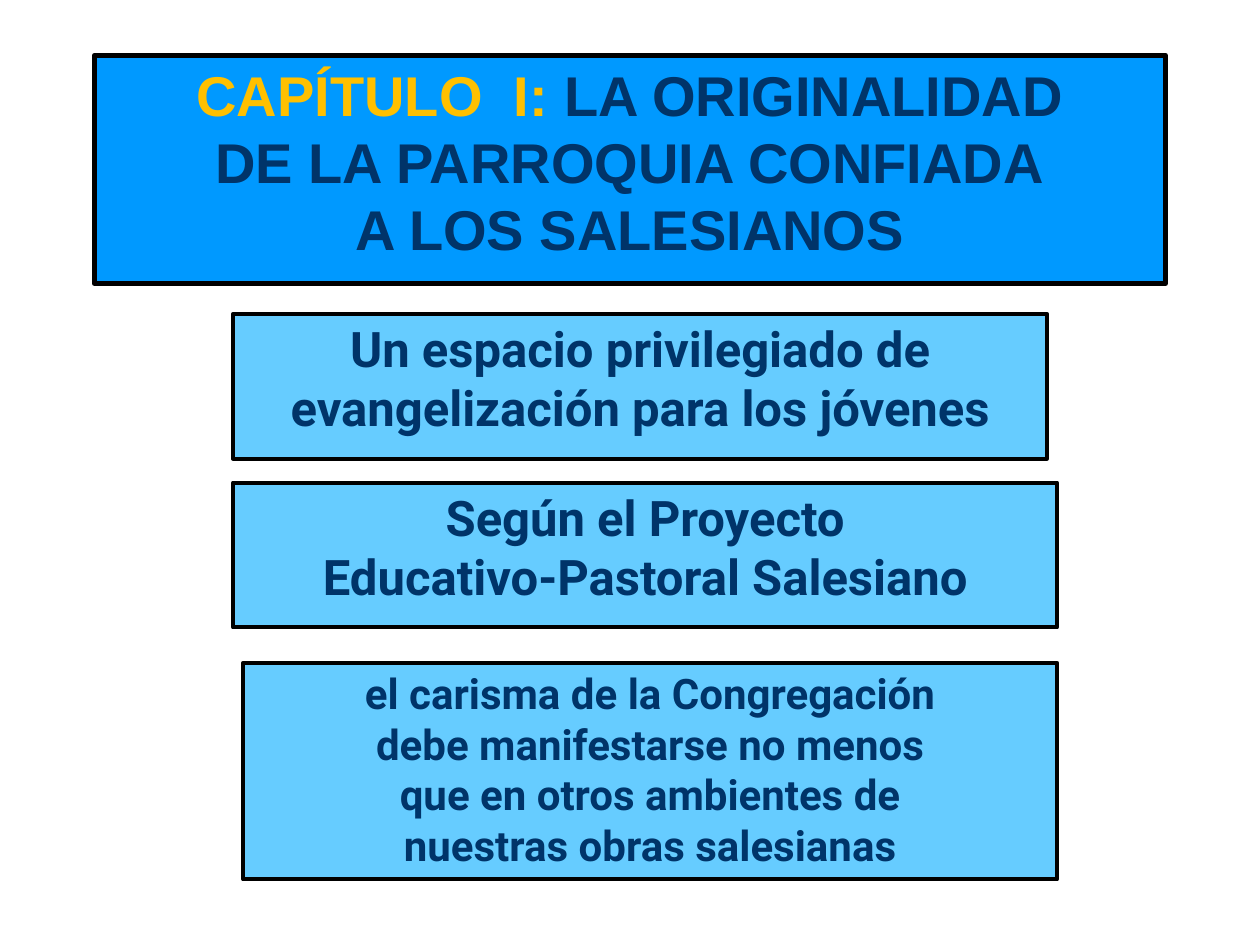
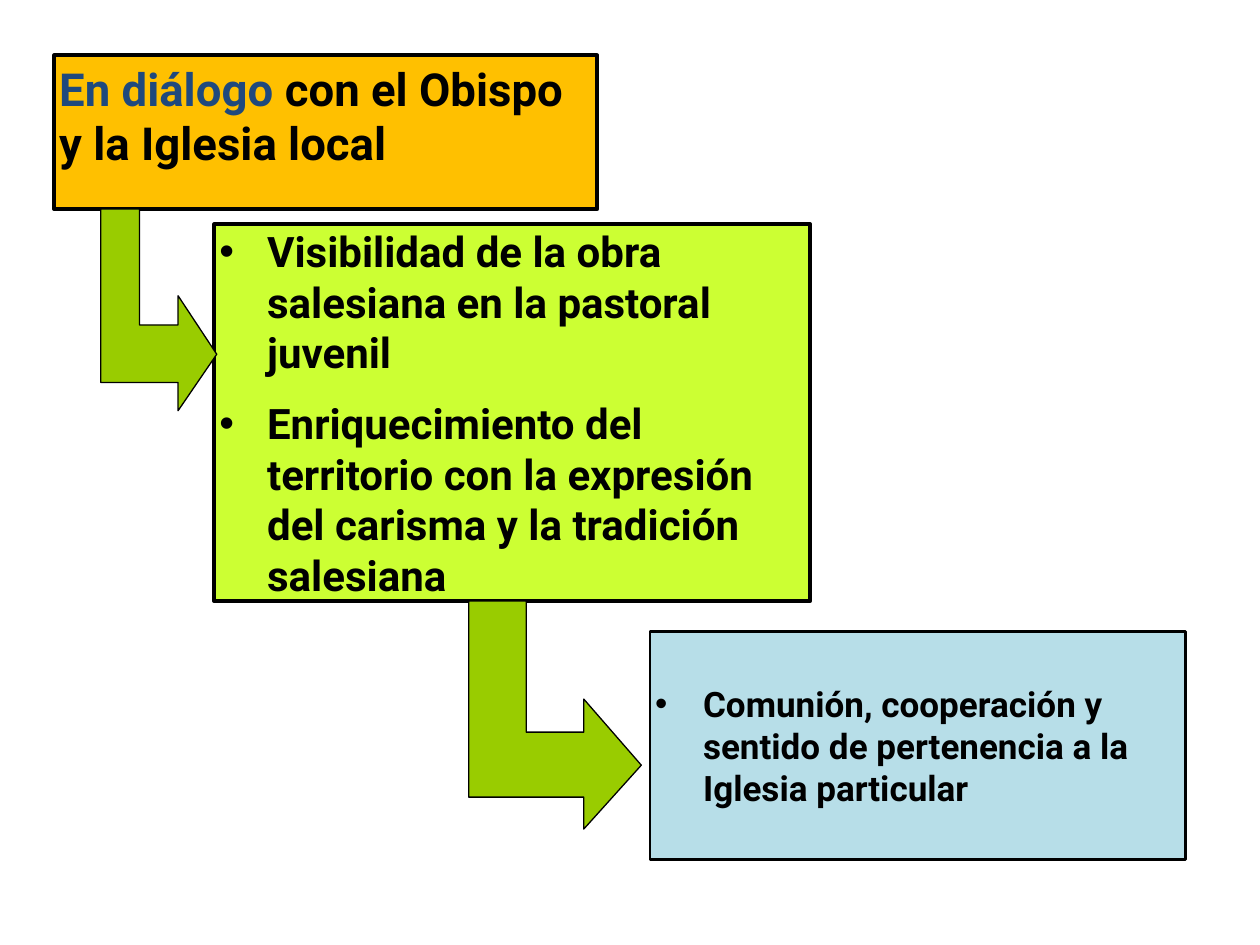
from lxml.etree import SubElement as Sub
from pptx import Presentation as Deck
from pptx.dml.color import RGBColor as Rgb
from pptx.enum.shapes import MSO_SHAPE as Kind
from pptx.enum.text import MSO_ANCHOR as Anchor, MSO_AUTO_SIZE as Fit, PP_ALIGN as Align
from pptx.oxml.ns import qn
from pptx.util import Inches, Pt

COLS = 100
NAVY, BLACK, GOLD, LIME = "003469", "000000", "FFC000", "99CC00"
BEND = [(0, 0), (1 / 3, 0), (1 / 3, 0.575), (2 / 3, 0.575), (2 / 3, 0.43),
        (1, 0.72), (2 / 3, 1), (2 / 3, 0.86), (0, 0.86)]


def hue(code):
    return Rgb.from_string(code)


class Board:
    """Draws framed panels and bent arrows on a grid over the current slide."""

    def __init__(self):
        self.deck = Deck()
        self.deck.slide_width, self.deck.slide_height = Inches(10), Inches(7.5)
        self.unit = self.deck.slide_width / COLS
        self.font = "Roboto"
        self.slide = None

    def page(self, layout):
        self.slide = self.deck.slides.add_slide(self.deck.slide_layouts[layout])

    def grid(self, *cells):
        return [round(cell * self.unit) for cell in cells]

    def paint(self, shape, fill, width):
        shape.fill.solid()
        shape.fill.fore_color.rgb = hue(fill)
        shape.line.color.rgb = hue(BLACK)
        shape.line.width = Pt(width)

    def frame(self, shape, area, fill, width=2.25, anchor=Anchor.TOP):
        shape.left, shape.top, shape.width, shape.height = self.grid(*area)
        self.paint(shape, fill, width)
        text = shape.text_frame
        text.word_wrap, text.auto_size = True, Fit.NONE
        text.vertical_anchor = anchor
        text.margin_left = text.margin_right = Inches(0.04)
        text.margin_top = text.margin_bottom = Inches(0.04)
        return text

    def label(self, text, lines, size, color, font=None, align=Align.LEFT, after=0):
        text.text = "\n".join(lines)
        for par in text.paragraphs:
            par.alignment = align
            par.space_before, par.space_after = Pt(0), Pt(after)
            for run in par.runs:
                self.style(run, size, color, font)

    def style(self, run, size, color, font=None):
        run.font.name = font or self.font
        run.font.size, run.font.bold = Pt(size), True
        run.font.color.rgb = hue(color)

    def title(self, area, fill, lead, tint, lines, size, color, width, font=None,
              align=Align.LEFT):
        text = self.frame(self.slide.shapes.title, area, fill, width)
        self.label(text, [lead, *lines[1:]], size, color, font, align)
        first = text.paragraphs[0]
        first.runs[0].font.color.rgb = hue(tint)
        rest = first.add_run()
        rest.text = lines[0]
        self.style(rest, size, color, font)

    def box(self):
        shape = self.slide.shapes.add_shape(Kind.RECTANGLE, 0, 0, 0, 0)
        shape.shadow.inherit = False
        return shape

    def panel(self, area, lines, size):
        text = self.frame(self.box(), area, "66CCFF")
        self.label(text, lines, size, NAVY, align=Align.CENTER)

    def items(self, shape, area, fill, lines, size, width=2.25, after=0):
        text = self.frame(shape, area, fill, width, Anchor.MIDDLE)
        self.label(text, lines, size, BLACK, after=after)
        for par in text.paragraphs:
            props = par._p.get_or_add_pPr()
            props.set("marL", str(Inches(0.38)))
            props.set("indent", str(-Inches(0.38)))
            Sub(props, qn("a:buFont"), typeface="Arial")
            Sub(props, qn("a:buChar"), char="•")

    def arrow(self, left, top, width, height):
        dots = [self.grid(left + x * width, top + y * height) for x, y in BEND]
        trace = self.slide.shapes.build_freeform(*dots[0])
        trace.add_line_segments(dots[1:], close=True)
        shape = trace.convert_to_shape()
        shape.shadow.inherit = False
        self.paint(shape, LIME, 0.75)


def chapter(board):
    board.page(5)
    board.panel((18.5, 24.9, 64.6, 11.5),
                ["Un espacio privilegiado de", "evangelización para los jóvenes"], 28)
    board.panel((18.5, 38.3, 65.4, 11.5),
                ["Según el Proyecto", "Educativo-Pastoral Salesiano"], 28)
    board.panel((19.3, 52.6, 64.6, 17.2),
                ["el carisma de la Congregación", "debe manifestarse no menos",
                 "que en otros ambientes de", "nuestras obras salesianas"], 24)
    board.title((7.5, 4.4, 85, 18.1), "0099FF", "CAPÍTULO  I: ", GOLD,
                ["LA ORIGINALIDAD", "DE LA PARROQUIA CONFIADA", "A LOS SALESIANOS"],
                32, NAVY, 3, "Arial", Align.CENTER)


def dialog(board):
    board.page(1)
    board.title((4.3, 4.4, 43.1, 12.2), GOLD, "En diálogo ", "1F497D",
                ["con el Obispo y la Iglesia local"], 26, BLACK, 2.25)
    board.items(board.slide.placeholders[1], (17, 17.8, 47.3, 29.9), "CCFF33",
                ["Visibilidad de la obra salesiana en la pastoral juvenil",
                 "Enriquecimiento del territorio con la expresión del carisma "
                 "y la tradición salesiana"], 24, after=12)
    board.arrow(8, 16.6, 9.2, 16)
    board.items(board.box(), (51.6, 50.1, 42.5, 18.1), "B7DEE8",
                ["Comunión, cooperación y sentido de pertenencia a la Iglesia particular"],
                20, 1.5)
    board.arrow(37.2, 47.7, 13.7, 18.1)


def main():
    board = Board()
    chapter(board)
    dialog(board)
    board.deck.save("out.pptx")


if __name__ == "__main__":
    main()
